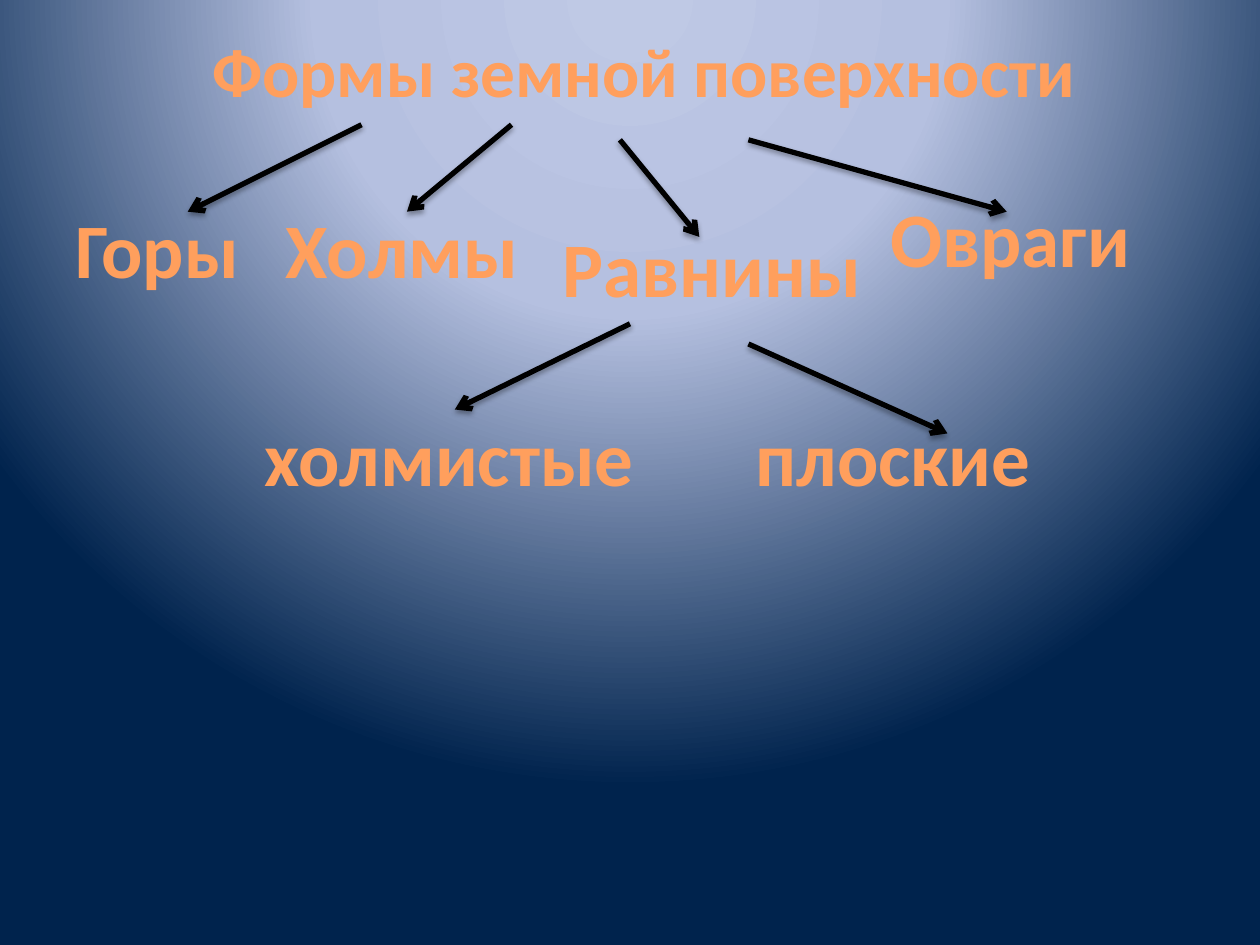
"""Builds a slide with a tree of landform types."""
from lxml.etree import fromstring
from pptx import Presentation
from pptx.dml.color import RGBColor
from pptx.enum.shapes import MSO_CONNECTOR
from pptx.enum.text import MSO_ANCHOR, PP_ALIGN
from pptx.util import Inches, Pt

ORANGE = RGBColor(0xFF, 0x9F, 0x5D)
BLACK = RGBColor(0, 0, 0)
TOP, BOTTOM = MSO_ANCHOR.TOP, MSO_ANCHOR.BOTTOM
NS = 'xmlns:a="http://schemas.openxmlformats.org/drawingml/2006/main"'

TITLE = "Формы земной поверхности"
WORDS = [
    ("Горы", (0.5, 1.68, 1.98, 0.7), BOTTOM),
    ("Холмы", (2.17, 1.68, 2.13, 0.7), BOTTOM),
    ("Равнины", (4.37, 1.7, 2.6, 0.94), TOP),
    ("Овраги", (6.97, 1.46, 2.63, 0.84), TOP),
    ("холмистые", (2, 3.2, 3.4, 0.63), TOP),
    ("плоские", (5.9, 3.2, 2.6, 0.63), TOP),
]
ARROWS = [
    (2.87, 0.99, 1.49, 1.68),
    (4.06, 0.99, 3.23, 1.68),
    (4.92, 1.11, 5.55, 1.88),
    (5.94, 1.11, 7.99, 1.68),
    (5, 2.57, 3.61, 3.25),
    (5.94, 2.73, 7.52, 3.44),
]
STOPS = [(0, "BFC9E5"), (40, "B5C0E0"), (100, "00234D")]
SHADOW = (
    f'<a:effectLst {NS}><a:outerShdw blurRad="{Pt(3.1)}" dist="{Pt(1.8)}" '
    'dir="5400000" rotWithShape="0"><a:srgbClr val="000000">'
    '<a:alpha val="35000"/></a:srgbClr></a:outerShdw></a:effectLst>'
)


def paint(slide):
    fill = slide.background.fill
    fill.gradient()
    stops = "".join(
        f'<a:gs pos="{pos * 1000}"><a:srgbClr val="{color}"/></a:gs>'
        for pos, color in STOPS
    )
    grad = fromstring(
        f'<a:gradFill {NS} rotWithShape="1"><a:gsLst>{stops}</a:gsLst>'
        '<a:path path="circle"><a:fillToRect l="50000" t="-80000" '
        'r="50000" b="180000"/></a:path></a:gradFill>'
    )
    old = slide.background._cSld.bg.bgPr[0]
    old.getparent().replace(old, grad)


def write(shape, text, size, anchor, align=PP_ALIGN.LEFT):
    frame = shape.text_frame
    frame.text = text
    frame.word_wrap = True
    frame.vertical_anchor = anchor
    para = frame.paragraphs[0]
    para.alignment = align
    font = para.runs[0].font
    for name, value in dict(name="Calibri", size=Pt(size), bold=True).items():
        setattr(font, name, value)
    font.color.rgb = ORANGE


def arrow(slide, ends):
    link = slide.shapes.add_connector(MSO_CONNECTOR.STRAIGHT, *map(Inches, ends))
    link.line.color.rgb = BLACK
    link.line.width = Pt(3)
    props = link._element.spPr
    props.ln.append(fromstring(f'<a:tailEnd {NS} type="arrow"/>'))
    props.append(fromstring(SHADOW))


def main():
    deck = Presentation()
    deck.slide_width, deck.slide_height = Inches(10), Inches(7.5)
    slide = deck.slides.add_slide(deck.slide_layouts[5])
    paint(slide)

    title = slide.shapes.title
    place = dict(left=0.61, top=0.22, width=9, height=1.25)
    for name, value in place.items():
        setattr(title, name, Inches(value))
    write(title, TITLE, 39.6, TOP, PP_ALIGN.CENTER)
    title.text_frame.margin_top = 0

    for text, box, anchor in WORDS:
        write(slide.shapes.add_textbox(*map(Inches, box)), text, 44, anchor)
    for ends in ARROWS:
        arrow(slide, ends)
    deck.save("out.pptx")


if __name__ == "__main__":
    main()
